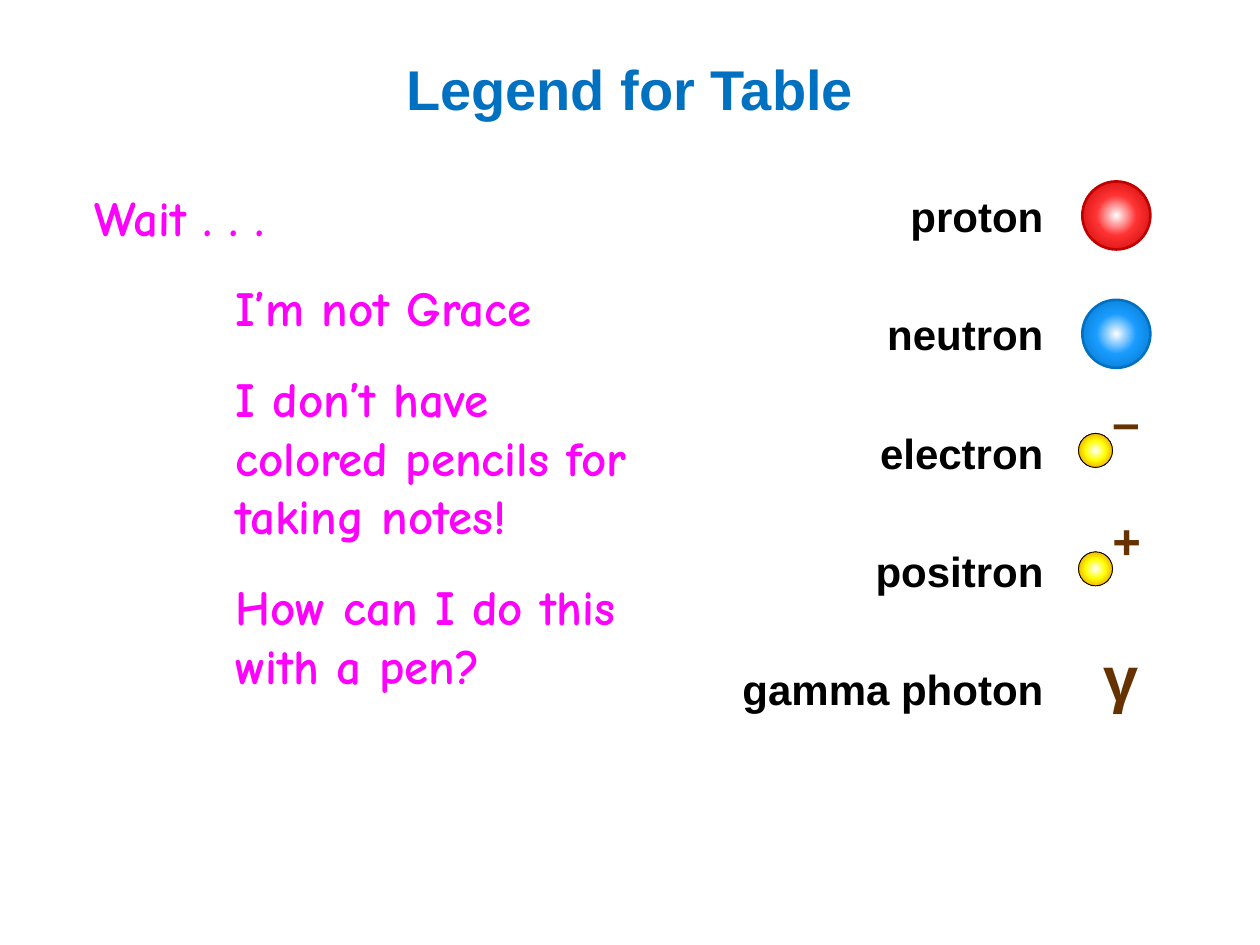
from lxml import etree
from pptx import Presentation
from pptx.dml.color import RGBColor
from pptx.enum.shapes import MSO_SHAPE as Shape
from pptx.enum.text import MSO_ANCHOR as Anchor, MSO_AUTO_SIZE as AutoSize, PP_ALIGN as Align
from pptx.oxml import parse_xml
from pptx.oxml.ns import nsdecls, qn
from pptx.util import Inches, Pt

TITLE = "Legend for Table"
COMMENTS = [
    "Wait . . .",
    "I’m not Grace",
    "I don’t have colored pencils for taking notes!",
    "How can I do this with a pen?",
]
PARTICLES = [
    {"name": "proton", "width": 1.27, "ball": "proton"},
    {"name": "neutron", "width": 1.45, "ball": "neutron"},
    {"name": "electron", "width": 1.51, "ball": "lepton", "sign": "–"},
    {"name": "positron", "width": 1.55, "ball": "lepton", "sign": "+"},
    {"name": "gamma photon", "width": 2.61, "symbol": "γ"},
]

THEME = {
    "font": "Arial", "note_font": "Comic Neue",
    "title": "0070C0", "label": "000000", "symbol": "663300", "note": "FF00FF",
    "title_size": 32, "label_size": 24, "sign_size": 28, "symbol_size": 36, "note_size": 28,
}
BALLS = {
    "proton": {"stops": ("FFFFFF", "FF3333", "C00000"), "line": "C00000",
               "weight": 1.5, "left": 8.59, "drop": -0.02, "size": 0.54},
    "neutron": {"stops": ("FFFFFF", "199CFF", "0070C0"), "line": "0070C0",
                "weight": 1.5, "left": 8.59, "drop": -0.02, "size": 0.54},
    "lepton": {"stops": ("FFFFFF", "FFFF00", "E46C0A"), "line": "000000",
               "weight": 0.5, "left": 8.56, "drop": 0.1, "size": 0.27},
}
STOP_POSITIONS = (0, 42, 100)
FIRST_ROW, ROW_PITCH, LABEL_RIGHT = 1.46, 0.94, 8.38


def write_paragraph(paragraph, text, size, color, font=THEME["font"],
                    align=Align.LEFT, indent=0, before=0):
    paragraph.alignment = align
    paragraph.space_before = Pt(before)
    if indent:
        properties = paragraph._p.get_or_add_pPr()
        properties.set("marL", str(Inches(indent)))
        properties.set("indent", "0")
    run = paragraph.add_run()
    run.text = text
    run.font.name = font
    run.font.size = Pt(size)
    run.font.bold = True
    run.font.color.rgb = RGBColor.from_string(color)


def add_text_frame(slide, left, top, width, height, wrap=False):
    box = slide.shapes.add_textbox(Inches(left), Inches(top), Inches(width), Inches(height))
    frame = box.text_frame
    frame.word_wrap = wrap
    frame.auto_size = AutoSize.SHAPE_TO_FIT_TEXT
    return frame


def add_label(slide, text, left, top, width, height, **style):
    frame = add_text_frame(slide, left, top, width, height)
    write_paragraph(frame.paragraphs[0], text, **style)


def add_ball(slide, row_top, stops, line, weight, left, drop, size):
    ball = slide.shapes.add_shape(Shape.OVAL, Inches(left), Inches(row_top + drop),
                                  Inches(size), Inches(size))
    ball.shadow.inherit = False
    ball.line.color.rgb = RGBColor.from_string(line)
    ball.line.width = Pt(weight)
    ball.fill.solid()
    gradient = parse_xml(f'<a:gradFill {nsdecls("a")} rotWithShape="1"><a:gsLst/>'
                         '<a:path path="circle"><a:fillToRect l="50000" t="50000" '
                         'r="50000" b="50000"/></a:path></a:gradFill>')
    for position, color in zip(STOP_POSITIONS, stops):
        stop = etree.SubElement(gradient[0], qn("a:gs"), pos=str(position * 1000))
        etree.SubElement(stop, qn("a:srgbClr"), val=color)
    properties = ball._element.spPr
    properties.replace(properties.find(qn("a:solidFill")), gradient)


def add_title(slide):
    title = slide.shapes.title
    title.left, title.top = Inches(0.2), Inches(0.3)
    title.width, title.height = Inches(9.6), Inches(0.8)
    title.text_frame.vertical_anchor = Anchor.MIDDLE
    write_paragraph(title.text_frame.paragraphs[0], TITLE, size=THEME["title_size"],
                    color=THEME["title"], align=Align.CENTER)


def add_comments(slide):
    frame = add_text_frame(slide, 0.65, 1.44, 4.53, 4.16, wrap=True)
    for index, text in enumerate(COMMENTS):
        paragraph = frame.add_paragraph() if index else frame.paragraphs[0]
        write_paragraph(paragraph, text, size=THEME["note_size"], color=THEME["note"],
                        font=THEME["note_font"], indent=1.12 if index else 0,
                        before=18 if index else 0)


def add_particle(slide, particle, top):
    add_label(slide, particle["name"], LABEL_RIGHT - particle["width"], top,
              particle["width"], 0.5, size=THEME["label_size"],
              color=THEME["label"], align=Align.RIGHT)
    if "ball" in particle:
        add_ball(slide, top, **BALLS[particle["ball"]])
    if "sign" in particle:
        add_label(slide, particle["sign"], 8.73, top - 0.28, 0.43, 0.57,
                  size=THEME["sign_size"], color=THEME["symbol"])
    if "symbol" in particle:
        add_label(slide, particle["symbol"], 8.66, top - 0.2, 0.41, 0.71,
                  size=THEME["symbol_size"], color=THEME["symbol"])


def main():
    presentation = Presentation()
    presentation.slide_width, presentation.slide_height = Inches(10), Inches(7.5)
    slide = presentation.slides.add_slide(presentation.slide_layouts[5])
    add_title(slide)
    for row, particle in enumerate(PARTICLES):
        add_particle(slide, particle, FIRST_ROW + row * ROW_PITCH)
    add_comments(slide)
    presentation.save("out.pptx")


if __name__ == "__main__":
    main()
